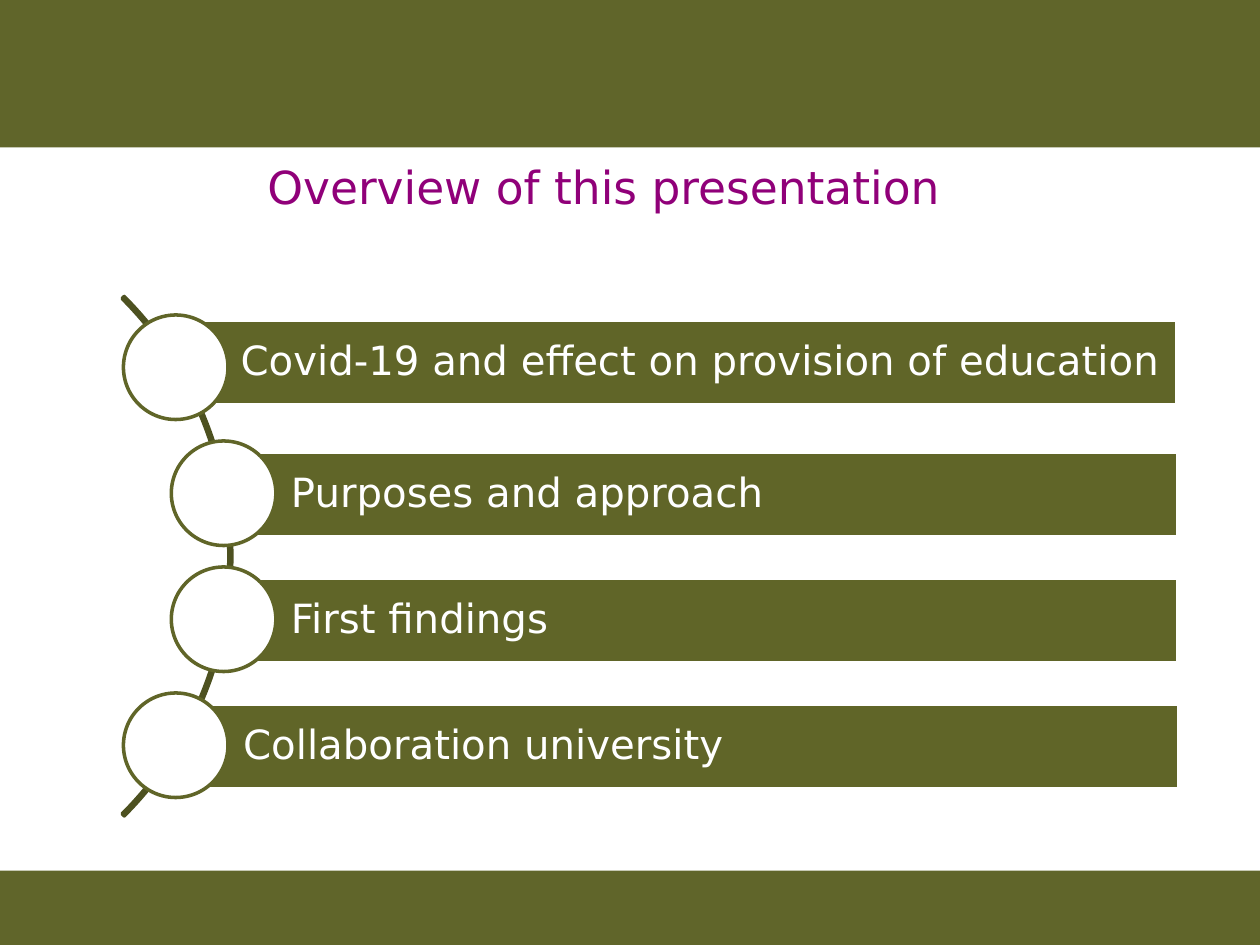
from pptx import Presentation
from pptx.dml.color import RGBColor
from pptx.enum.shapes import MSO_SHAPE
from pptx.enum.text import MSO_ANCHOR, PP_ALIGN
from pptx.util import Inches, Pt

FONT = "DejaVu Sans"
OLIVE, BAND_OLIVE, DARK_OLIVE = "606528", "60652A", "4D5120"
WHITE, PURPLE = "FFFFFF", "900079"

TITLE = "Overview of this presentation"
# topic, circle left, bar left, bar top, bar width
TOPICS = [
    ("Covid-19 and effect on provision of education", 0.98, 1.38, 2.54, 7.96),
    ("Purposes and approach", 1.36, 1.78, 3.59, 7.57),
    ("First findings", 1.36, 1.78, 4.59, 7.57),
    ("Collaboration university", 0.98, 1.4, 5.59, 7.96),
]
PAGE_BANDS = [(0, 1.17), (6.91, 0.59)]  # top, height
FIRST_CIRCLE_TOP, CIRCLE_STEP, CIRCLE_SIZE = 2.5, 1, 0.83
BAR_HEIGHT = 0.67


def color(hex_string):
    return RGBColor.from_string(hex_string)


def add_shape(slide, kind, box, fill=None, line=None):
    """Add a flat preset shape; without a fill or line colour that part is empty."""
    shape = slide.shapes.add_shape(kind, *(Inches(length) for length in box))
    shape.shadow.inherit = False
    if fill:
        shape.fill.solid()
        shape.fill.fore_color.rgb = color(fill)
    else:
        shape.fill.background()
    if line:
        shape.line.color.rgb = color(line)
        shape.line.width = Pt(2)
    else:
        shape.line.fill.background()
    return shape


def write_text(shape, text, size, text_color, alignment, margins):
    frame = shape.text_frame
    frame.word_wrap = True
    frame.vertical_anchor = MSO_ANCHOR.MIDDLE
    (frame.margin_left, frame.margin_top,
     frame.margin_right, frame.margin_bottom) = (Inches(margin) for margin in margins)
    paragraph = frame.paragraphs[0]
    paragraph.alignment = alignment
    paragraph.line_spacing = 0.9
    run = paragraph.add_run()
    run.text = text
    run.font.name = FONT
    run.font.size = Pt(size)
    run.font.color.rgb = color(text_color)


def main():
    presentation = Presentation()
    presentation.slide_width = Inches(10)
    presentation.slide_height = Inches(7.5)
    slide = presentation.slides.add_slide(presentation.slide_layouts[5])

    for top, height in PAGE_BANDS:
        add_shape(slide, MSO_SHAPE.RECTANGLE, (0, top, 10, height), BAND_OLIVE)

    title = slide.shapes.title
    title.left, title.top = Inches(0.33), Inches(1.17)
    title.width, title.height = Inches(8.93), Inches(0.62)
    write_text(title, TITLE, 26, PURPLE, PP_ALIGN.CENTER, (0, 0, 0, 0))
    title.text_frame.paragraphs[0].line_spacing = 1.0

    arc = add_shape(slide, MSO_SHAPE.BLOCK_ARC, (-3.99, 1.5, 5.83, 5.83), line=DARK_OLIVE)
    for index, value in enumerate((189, 27, 0.004)):
        arc.adjustments[index] = value

    for index, (topic, circle_left, bar_left, bar_top, bar_width) in enumerate(TOPICS):
        bar = add_shape(slide, MSO_SHAPE.RECTANGLE,
                        (bar_left, bar_top, bar_width, BAR_HEIGHT), OLIVE, WHITE)
        write_text(bar, topic, 23, WHITE, PP_ALIGN.LEFT, (0.53, 0.06, 0.06, 0.06))
        circle_top = FIRST_CIRCLE_TOP + index * CIRCLE_STEP
        add_shape(slide, MSO_SHAPE.OVAL,
                  (circle_left, circle_top, CIRCLE_SIZE, CIRCLE_SIZE), WHITE, OLIVE)

    presentation.save("out.pptx")


if __name__ == "__main__":
    main()
